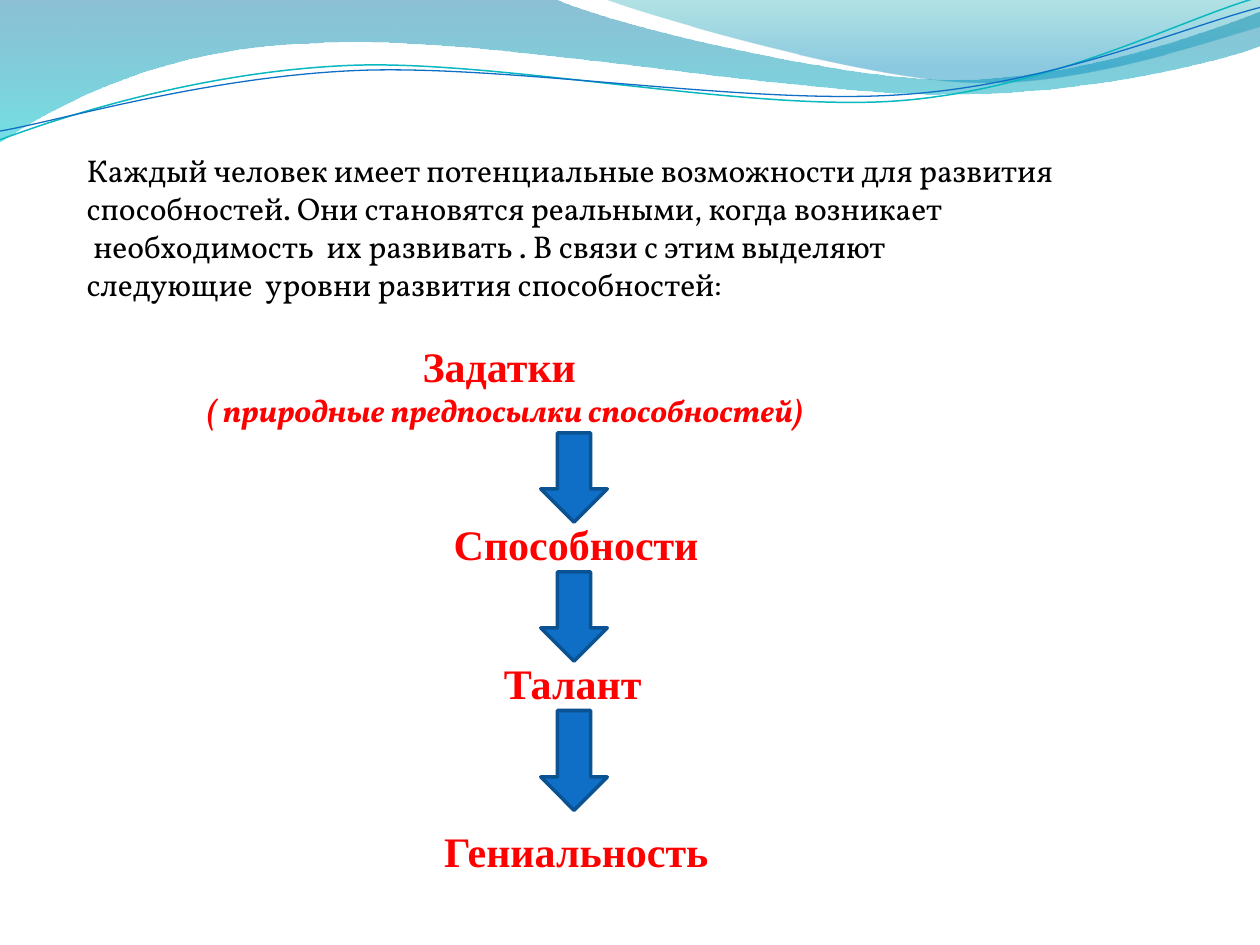
from math import cos, radians, sin

from pptx import Presentation
from pptx.dml.color import RGBColor as RGB
from pptx.enum.shapes import MSO_SHAPE as Kind
from pptx.oxml.ns import qn
from pptx.util import Pt
from lxml.etree import SubElement as Sub

BODY = dict(name="Vollkorn", size=Pt(18))
NOTE = dict(BODY, bold=True, italic=True)
HEAD = dict(name="Times New Roman", size=Pt(24), bold=True)
BLACK, RED, BLUE, NAVY, TEAL = "000000", "FF0000", "0F6FC6", "0B5292", "0AB8BF"
TILT = -2.7

# A pair is a straight segment, six numbers are a Bezier curve.
WAVE = [(0, 0), (316.8, -0.7), (342.7, 12.2, 478.1, 45.4, 545.8, 45.4),
        (614.2, 45.4, 689.8, 18.7, 720, 6.5), (720.7, 25.9),
        (707.8, 31.7, 626.4, 54.7, 537.1, 54),
        (447.8, 54, 275, 20.2, 185, 24.5),
        (92.9, 25.9, 33.1, 59.8, -0.7, 81.4), (0, 0)]
CREST = [(344.9, -0.7), (366.5, 7.9, 491, 44.6, 553.7, 46.8),
         (616.3, 49.7, 691.9, 23, 720, 15.1), (720, 0), (344.9, -0.7)]
UPPER = [(0, 79.9), (34.6, 67, 113.8, 41, 199.4, 37.4),
         (284.4, 33.8, 427, 64.1, 513.4, 57.6),
         (599.8, 51.1, 675.4, 10.8, 718.6, -1.4)]
LOWER = [(0, 74.9), (33.8, 69.1, 118.1, 43.9, 203.8, 40.3),
         (290.2, 36.7, 429.8, 60.5, 516.2, 54),
         (601.9, 48.2, 677.5, 15.1, 720, 4.3)]

# Text, font, colour, left indent, space before
INTRO = [
    ("Каждый человек имеет потенциальные возможности для развития", BODY, BLACK, 0, 0),
    ("способностей. Они становятся реальными, когда возникает", BODY, BLACK, 0, 0),
    ("необходимость  их развивать . В связи с этим выделяют", BODY, BLACK, 3.8, 0),
    ("следующие  уровни развития способностей:", BODY, BLACK, 0, 0),
    ("Задатки", HEAD, RED, 192, 21.5),
    ("( природные предпосылки способностей)", NOTE, RED, 68.5, 0),
]
# Arrow top and height, then the level below it: text, left, top, width
LEVELS = [(247.4, 51, "Способности", 252.2, 292.5, 197),
          (326.8, 51, "Талант", 280.8, 372, 136),
          (406, 57, "Гениальность", 246.7, 468.3, 170)]


def color(code):
    return RGB.from_string(code)


def pairs(seg):
    return list(zip(seg[::2], seg[1::2]))


def level(segs, hub):
    """Turn the segments about the hub, to undo the tilt of the shape."""
    c, s = cos(radians(-TILT)), sin(radians(-TILT))
    x0, y0 = hub
    return [tuple(v for x, y in pairs(seg)
                  for v in (x0 + (x - x0) * c - (y - y0) * s,
                            y0 + (x - x0) * s + (y - y0) * c))
            for seg in segs]


class Page:
    """Holds the current slide and draws each kind of element on it."""

    def __init__(self, slide):
        self.shapes = slide.shapes

    def outline(self, segs, close):
        first, *ends = [(Pt(seg[-2]), Pt(seg[-1])) for seg in segs]
        pen = self.shapes.build_freeform(*first)
        pen.add_line_segments(ends, close=close)
        shape = pen.convert_to_shape()
        shape.shadow.inherit = False
        nodes = list(shape.element.iter(qn("a:lnTo")))
        for node, seg in zip(nodes, segs[1:]):
            if len(seg) == 6:
                node.tag = qn("a:cubicBezTo")
                node.remove(node[0])
                for x, y in pairs(seg):
                    Sub(node, qn("a:pt"), x=str(Pt(x) - shape.left), y=str(Pt(y) - shape.top))
        return shape

    def band(self, segs, stops):
        """Draw a closed area that fades from top to bottom."""
        shape = self.outline(segs, True)
        shape.line.fill.background()
        shape.fill.gradient()
        shape.fill.gradient_angle = 270
        for stop, (pos, code, alpha) in zip(shape.fill.gradient_stops, stops):
            stop.position = pos
            stop.color.rgb = color(code)
        marks = shape.element.spPr.iter(qn("a:srgbClr"))
        for mark, (pos, code, alpha) in zip(list(marks), stops):
            Sub(mark, qn("a:alpha"), val=str(alpha * 1000))

    def curve(self, segs, hub, code, width):
        shape = self.outline(level(segs, hub), False)
        shape.rotation = TILT
        shape.fill.background()
        shape.line.color.rgb = color(code)
        shape.line.width = Pt(width)

    def arrow(self, left, top, width, height):
        shape = self.shapes.add_shape(Kind.DOWN_ARROW, Pt(left), Pt(top), Pt(width), Pt(height))
        shape.shadow.inherit = False
        shape.fill.solid()
        shape.fill.fore_color.rgb = color(BLUE)
        shape.line.color.rgb = color(NAVY)
        shape.line.width = Pt(2)

    def text(self, left, top, width, height, rows):
        frame = self.shapes.add_textbox(Pt(left), Pt(top), Pt(width), Pt(height)).text_frame
        frame.word_wrap = True
        for i, (words, style, code, indent, gap) in enumerate(rows):
            para = frame.add_paragraph() if i else frame.paragraphs[0]
            para.space_before = Pt(gap)
            para._p.get_or_add_pPr().set("marL", str(Pt(indent)))
            run = para.add_run()
            run.text = words
            for key, value in style.items():
                setattr(run.font, key, value)
            run.font.color.rgb = color(code)


def main():
    deck = Presentation()
    deck.slide_width, deck.slide_height = Pt(720), Pt(540)
    page = Page(deck.slides.add_slide(deck.slide_layouts[6]))
    page.band(WAVE, [(0, "0074A1", 45), (1, "00C6CF", 55)])
    page.band(CREST, [(0, "00A1A9", 30), (0.8, "008BBF", 45)])
    page.curve(UPPER, (359.3, 39.3), TEAL, 0.85)
    page.curve(LOWER, (360, 41.4), BLUE, 0.75)
    page.text(42.4, 83, 572.5, 189, INTRO)
    for top, height, words, left, base, width in LEVELS:
        page.arrow(309, top, 38, height)
        page.text(left, base, width, 36, [(words, HEAD, RED, 0, 0)])
    deck.save("out.pptx")


if __name__ == "__main__":
    main()
